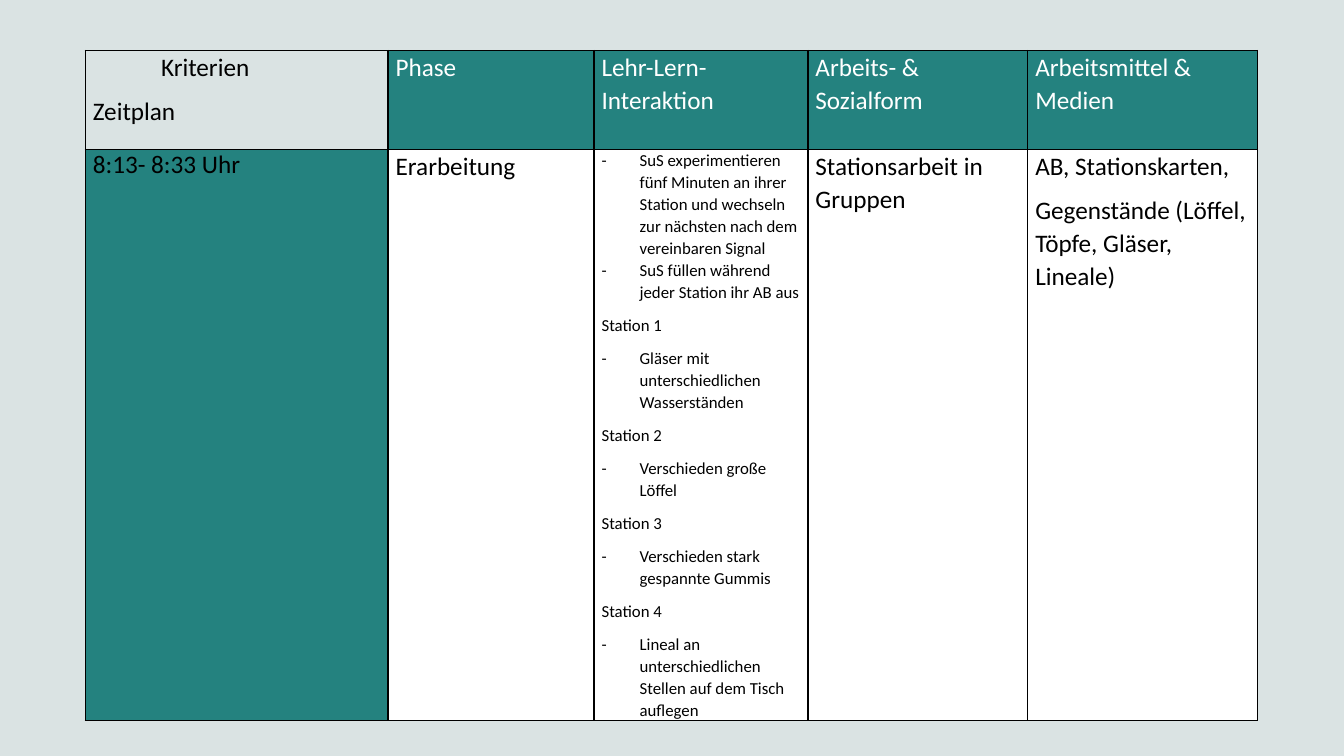
import dataclasses

import lxml.etree
import pptx
import pptx.dml.color
import pptx.oxml.ns
import pptx.util

Cm = pptx.util.Cm
Pt = pptx.util.Pt
qualified = pptx.oxml.ns.qn


@dataclasses.dataclass(frozen=True)
class Theme:
    font: str = "Calibri"
    text_size: int = 18
    detail_size: int = 12
    background: str = "DAE3E3"
    teal: str = "24827F"
    white: str = "FFFFFF"
    black: str = "000000"


THEME = Theme()


@dataclasses.dataclass(frozen=True)
class Line:
    text: str
    size: int = THEME.text_size
    bullet: bool = False
    indent: float = 0
    spacing: float = 1.07
    after: int = 8


@dataclasses.dataclass(frozen=True)
class CellContent:
    lines: list
    fill: str | None = THEME.white
    color: str = THEME.black


def detail(text, bullet=True, after=8):
    return Line(text, size=THEME.detail_size, bullet=bullet, after=after)


def header(text):
    return CellContent([Line(text)], THEME.teal, THEME.white)


def station_lines(stations):
    for number, task in enumerate(stations, start=1):
        yield detail(f"Station {number}", bullet=False)
        yield detail(task)


COLUMN_WIDTHS = [7.63, 5.19, 5.39, 5.54, 5.8]
ROW_HEIGHTS = [2.49, 14.2]

STATIONS = [
    "Gläser mit unterschiedlichen Wasserständen",
    "Verschieden große Löffel",
    "Verschieden stark gespannte Gummis",
    "Lineal an unterschiedlichen Stellen auf dem Tisch auflegen",
]

LESSON_PLAN = [
    [
        CellContent([Line("Kriterien", indent=1.72), Line("Zeitplan", after=0)], fill=None),
        header("Phase"),
        header("Lehr-Lern-Interaktion"),
        header("Arbeits- & Sozialform"),
        header("Arbeitsmittel & Medien"),
    ],
    [
        CellContent([Line("8:13- 8:33 Uhr", spacing=1)], THEME.teal),
        CellContent([Line("Erarbeitung")]),
        CellContent([
            detail("SuS experimentieren fünf Minuten an ihrer Station und wechseln "
                   "zur nächsten nach dem vereinbaren Signal", after=0),
            detail("SuS füllen während jeder Station ihr AB aus"),
            *station_lines(STATIONS),
        ]),
        CellContent([Line("Stationsarbeit in Gruppen")]),
        CellContent([
            Line("AB, Stationskarten,"),
            Line("Gegenstände (Löffel, Töpfe, Gläser, Lineale)"),
        ]),
    ],
]


def rgb(value):
    return pptx.dml.color.RGBColor.from_string(value)


def set_borders(cell):
    properties = cell._tc.get_or_add_tcPr()
    for side in ("lnL", "lnR", "lnT", "lnB"):
        border = lxml.etree.SubElement(properties, qualified(f"a:{side}"), w=str(Pt(1)))
        fill = lxml.etree.SubElement(border, qualified("a:solidFill"))
        lxml.etree.SubElement(fill, qualified("a:srgbClr"), val=THEME.black)


def set_indent(para, left, first=0):
    properties = para._p.get_or_add_pPr()
    properties.set("marL", str(Cm(left)))
    properties.set("indent", str(Cm(first)))


def set_bullet(para):
    set_indent(para, 0.96, -0.96)
    properties = para._p.get_or_add_pPr()
    lxml.etree.SubElement(properties, qualified("a:buFont"), typeface=THEME.font)
    lxml.etree.SubElement(properties, qualified("a:buChar"), char="-")


def write_line(para, line, color):
    para.line_spacing = line.spacing
    para.space_after = Pt(line.after)
    if line.bullet:
        set_bullet(para)
    elif line.indent:
        set_indent(para, line.indent)
    span = para.add_run()
    span.text = line.text
    span.font.name = THEME.font
    span.font.size = Pt(line.size)
    span.font.color.rgb = rgb(color)


def fill_cell(cell, content):
    cell.margin_left = cell.margin_right = Cm(0.19)
    cell.margin_top = cell.margin_bottom = 0
    set_borders(cell)
    if content.fill is None:
        cell.fill.background()
    else:
        cell.fill.solid()
        cell.fill.fore_color.rgb = rgb(content.fill)
    frame = cell.text_frame
    for index, line in enumerate(content.lines):
        para = frame.add_paragraph() if index else frame.paragraphs[0]
        write_line(para, line, content.color)


def add_lesson_table(page):
    table = page.shapes.add_table(
        len(ROW_HEIGHTS), len(COLUMN_WIDTHS), Cm(2.15), Cm(1.27),
        Cm(sum(COLUMN_WIDTHS)), Cm(sum(ROW_HEIGHTS))).table
    table.first_row = table.horz_banding = False
    for column, width in zip(table.columns, COLUMN_WIDTHS):
        column.width = Cm(width)
    for row, height, contents in zip(table.rows, ROW_HEIGHTS, LESSON_PLAN):
        row.height = Cm(height)
        for cell, content in zip(row.cells, contents):
            fill_cell(cell, content)


def main():
    deck = pptx.Presentation()
    deck.slide_width = Cm(33.87)
    deck.slide_height = Cm(19.05)
    page = deck.slides.add_slide(deck.slide_layouts[6])
    page.background.fill.solid()
    page.background.fill.fore_color.rgb = rgb(THEME.background)
    add_lesson_table(page)
    deck.save("out.pptx")


if __name__ == "__main__":
    main()
